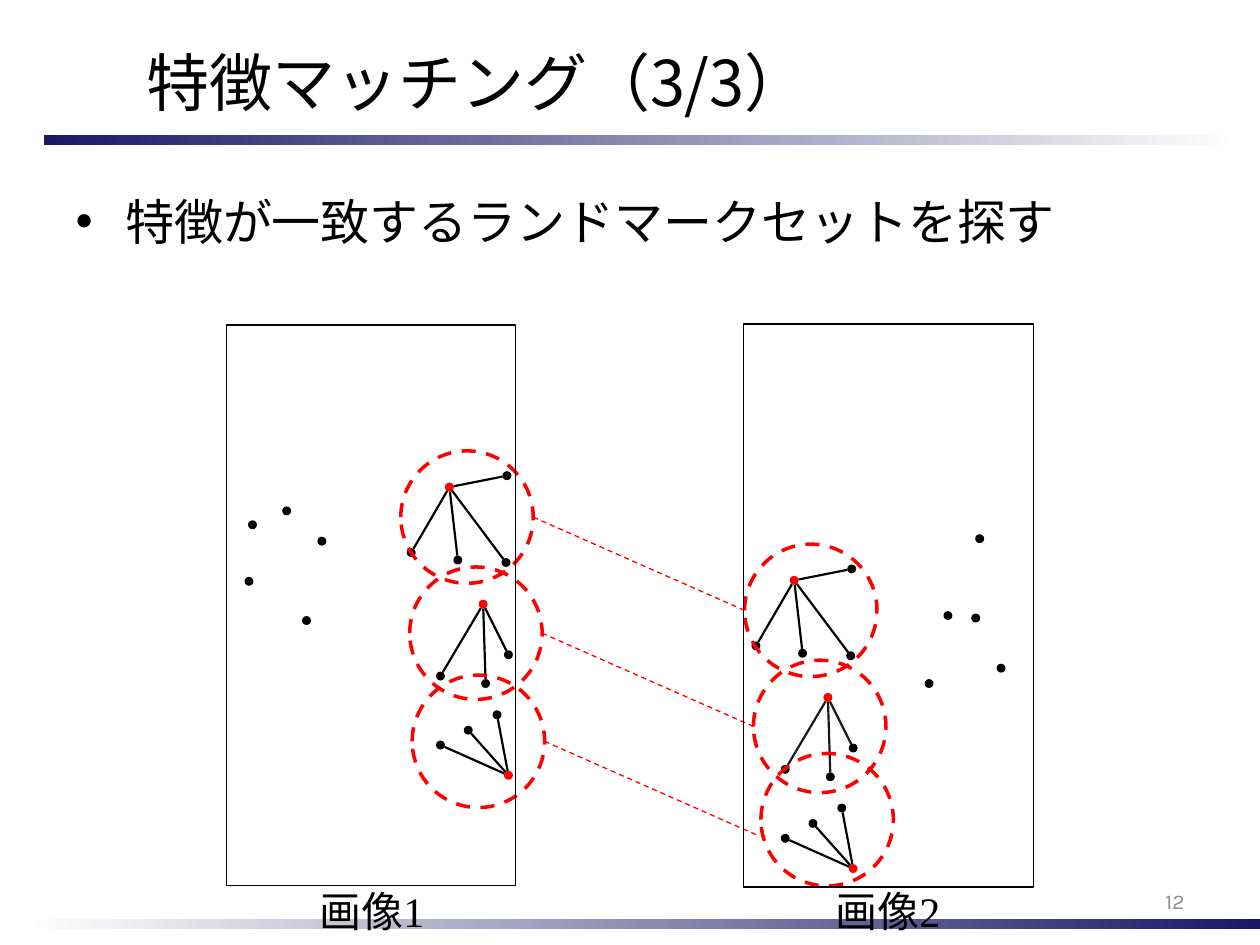
"""Build the feature matching slide with two linked landmark images."""
from dataclasses import dataclass
from math import hypot

from lxml import etree
from pptx import Presentation
from pptx.dml.color import RGBColor
from pptx.enum.dml import MSO_LINE_DASH_STYLE
from pptx.enum.shapes import MSO_CONNECTOR_TYPE, MSO_SHAPE
from pptx.enum.text import MSO_ANCHOR, MSO_AUTO_SIZE, PP_ALIGN
from pptx.oxml.ns import qn
from pptx.util import Cm, Pt

DASH = MSO_LINE_DASH_STYLE.DASH
STRAIGHT = MSO_CONNECTOR_TYPE.STRAIGHT
OVAL, RECTANGLE = MSO_SHAPE.OVAL, MSO_SHAPE.RECTANGLE
MIDDLE, TOP = MSO_ANCHOR.MIDDLE, MSO_ANCHOR.TOP
LEFT, CENTER, RIGHT = PP_ALIGN.LEFT, PP_ALIGN.CENTER, PP_ALIGN.RIGHT
NO_RESIZE = MSO_AUTO_SIZE.NONE

COLORS = {"black": "000000", "red": "FF0000", "navy": "191966",
          "white": "FFFFFF", "gray": "8C8C8C"}
JAPANESE_FONT = "Noto Sans CJK JP"
LABEL_FONT = "Times New Roman"
NUMBER_FONT = "Karla"
DOT_SIZE = 0.18
RING_SIZE = 2.67
IMAGE_SHIFT = (6.95, 1.88)
LINK_SHIFT = (4.26, 1.88)

Point = tuple[float, float]


@dataclass(frozen=True)
class Box:
    """Position and size in centimetres."""
    left: float
    top: float
    width: float
    height: float


@dataclass(frozen=True)
class Landmark:
    """A red hub, its black leaves, and the ring corner in each image."""
    hub: Point
    leaves: tuple[Point, ...]
    first_ring: Point
    second_ring: Point
    second_opacity: int = 100


@dataclass(frozen=True)
class ImagePanel:
    """An image frame with its caption and unmatched points."""
    frame: Box
    caption: str
    caption_box: Box
    loose_points: tuple[Point, ...]


LANDMARKS = (
    Landmark((9.06, 9.82), ((10.22, 9.59), (10.2, 11.34), (9.23, 11.29), (8.29, 11.14)),
             (8.08, 9.09), (15.01, 10.97)),
    Landmark((9.74, 12.18), ((10.25, 13.2), (9.79, 13.78), (8.88, 13.63)),
             (8.26, 11.43), (15.19, 13.31), 89),
    Landmark((10.25, 15.63), ((8.88, 15.02), (9.44, 14.72), (10.02, 14.41)),
             (8.31, 13.61), (15.34, 15.19)),
)
PANELS = (
    ImagePanel(Box(4.57, 6.55, 5.82, 11.3), "画像1", Box(6.05, 17.73, 2.9, 1.27),
               ((5.09, 10.58), (5.78, 10.3), (6.49, 10.91), (5.02, 11.72), (6.18, 12.51))),
    ImagePanel(Box(14.99, 6.53, 5.84, 11.35), "画像2", Box(16.48, 17.73, 2.84, 1.27),
               ((20.18, 13.47), (19.75, 10.86), (18.73, 13.78), (19.67, 12.46),
                (19.11, 12.41))),
)


def color(name: str) -> RGBColor:
    """Return a palette colour."""
    return RGBColor.from_string(COLORS[name])


def shifted(point: Point, shift: Point) -> Point:
    """Return a point moved by a shift."""
    return point[0] + shift[0], point[1] + shift[1]


def place(shape, box: Box) -> None:
    """Move and size a shape."""
    shape.left, shape.top = Cm(box.left), Cm(box.top)
    shape.width, shape.height = Cm(box.width), Cm(box.height)


def write(shape, text: str, size: int, font_name: str, color_name: str, alignment,
          anchor=TOP):
    """Write one formatted run and return its paragraph."""
    frame = shape.text_frame
    frame.word_wrap = True
    frame.auto_size = NO_RESIZE
    frame.vertical_anchor = anchor
    paragraph = frame.paragraphs[0]
    paragraph.alignment = alignment
    paragraph.space_before = Pt(0)
    run = paragraph.add_run()
    run.text = text
    run.font.size = Pt(size)
    run.font.color.rgb = color(color_name)
    run.font.name = font_name
    properties = run.font._element
    etree.SubElement(properties, qn("a:ea")).set("typeface", JAPANESE_FONT)
    return paragraph


def add_text(slide, box: Box, text: str, size: int, font_name: str, color_name: str,
             alignment, anchor=TOP) -> None:
    """Add a text box."""
    shape = slide.shapes.add_textbox(0, 0, 0, 0)
    place(shape, box)
    write(shape, text, size, font_name, color_name, alignment, anchor)


def add_plain_shape(slide, kind, box: Box):
    """Add a preset shape without a shadow."""
    shape = slide.shapes.add_shape(kind, 0, 0, 0, 0)
    place(shape, box)
    shape.shadow.inherit = False
    return shape


def add_gradient_bar(slide, box: Box, start: str, end: str) -> None:
    """Add a bar that fades from left to right."""
    shape = add_plain_shape(slide, RECTANGLE, box)
    shape.line.fill.background()
    shape.fill.gradient()
    shape.fill.gradient_angle = 0
    for stop, name in zip(shape.fill.gradient_stops, (start, end)):
        stop.color.rgb = color(name)


def add_outline(slide, kind, box: Box, color_name: str, width: float, dash=None) -> None:
    """Add an unfilled shape."""
    shape = add_plain_shape(slide, kind, box)
    shape.fill.background()
    shape.line.color.rgb = color(color_name)
    shape.line.width = Pt(width)
    if dash is not None:
        shape.line.dash_style = dash


def add_dot(slide, center: Point, color_name: str) -> None:
    """Add a dot around its centre."""
    left, top = shifted(center, (-DOT_SIZE / 2, -DOT_SIZE / 2))
    shape = add_plain_shape(slide, OVAL, Box(left, top, DOT_SIZE, DOT_SIZE))
    shape.fill.solid()
    shape.fill.fore_color.rgb = color(color_name)
    shape.line.fill.background()


def add_line(slide, start: Point, end: Point, color_name: str, width: float,
             dash=None, opacity: int = 100) -> None:
    """Add a straight connector."""
    connector = slide.shapes.add_connector(STRAIGHT, *map(Cm, start + end))
    connector.line.color.rgb = color(color_name)
    connector.line.width = Pt(width)
    if dash is not None:
        connector.line.dash_style = dash
    properties = connector._element.spPr
    if opacity < 100:
        fill_color = properties.find(".//" + qn("a:srgbClr"))
        etree.SubElement(fill_color, qn("a:alpha")).set("val", str(opacity * 1000))
    etree.SubElement(properties, qn("a:effectLst"))


def add_star(slide, landmark: Landmark, shift: Point, opacity: int) -> None:
    """Join a hub to its leaves, from dot edge to dot edge."""
    hub = shifted(landmark.hub, shift)
    for leaf in (shifted(leaf, shift) for leaf in landmark.leaves):
        across, down = leaf[0] - hub[0], leaf[1] - hub[1]
        ratio = DOT_SIZE / 2 / hypot(across, down)
        trim = (across * ratio, down * ratio)
        add_line(slide, shifted(hub, trim), shifted(leaf, (-trim[0], -trim[1])),
                 "black", 1.25, opacity=opacity)
        add_dot(slide, leaf, "black")
    add_dot(slide, hub, "red")


def main() -> None:
    """Build and save the presentation."""
    presentation = Presentation()
    presentation.slide_width, presentation.slide_height = Cm(25.4), Cm(19.05)
    slide = presentation.slides.add_slide(presentation.slide_layouts[1])
    add_gradient_bar(slide, Box(0.51, 18.52, 24.89, 0.2), "white", "navy")
    add_gradient_bar(slide, Box(0.89, 2.72, 24.1, 0.2), "navy", "white")

    title, body = slide.shapes.title, slide.placeholders[1]
    place(title, Box(2.69, 0.74, 16.28, 1.8))
    write(title, "特徴マッチング（3/3）", 36, JAPANESE_FONT, "black", LEFT, MIDDLE)
    place(body, Box(1.27, 3.73, 22.86, 13.28))
    item = write(body, "特徴が一致するランドマークセットを探す", 28, JAPANESE_FONT, "black", LEFT)
    properties = item._p.get_or_add_pPr()
    properties.set("marL", str(Cm(1)))
    properties.set("indent", str(-Cm(1)))
    add_text(slide, Box(18.21, 17.65, 5.92, 1.02), "12", 12, NUMBER_FONT, "gray", RIGHT, MIDDLE)

    for landmark in LANDMARKS:
        add_star(slide, landmark, (0, 0), 100)
        add_star(slide, landmark, IMAGE_SHIFT, landmark.second_opacity)
        for ring in (landmark.first_ring, landmark.second_ring):
            add_outline(slide, OVAL, Box(*ring, RING_SIZE, RING_SIZE), "red", 2, DASH)
        link_start = shifted(landmark.first_ring, (RING_SIZE, RING_SIZE / 2))
        add_line(slide, link_start, shifted(link_start, LINK_SHIFT), "red", 0.75, DASH)
    for panel in PANELS:
        for point in panel.loose_points:
            add_dot(slide, point, "black")
        add_outline(slide, RECTANGLE, panel.frame, "black", 0.75)
        add_text(slide, panel.caption_box, panel.caption, 24, LABEL_FONT, "black", CENTER)
    presentation.save("out.pptx")


if __name__ == "__main__":
    main()
